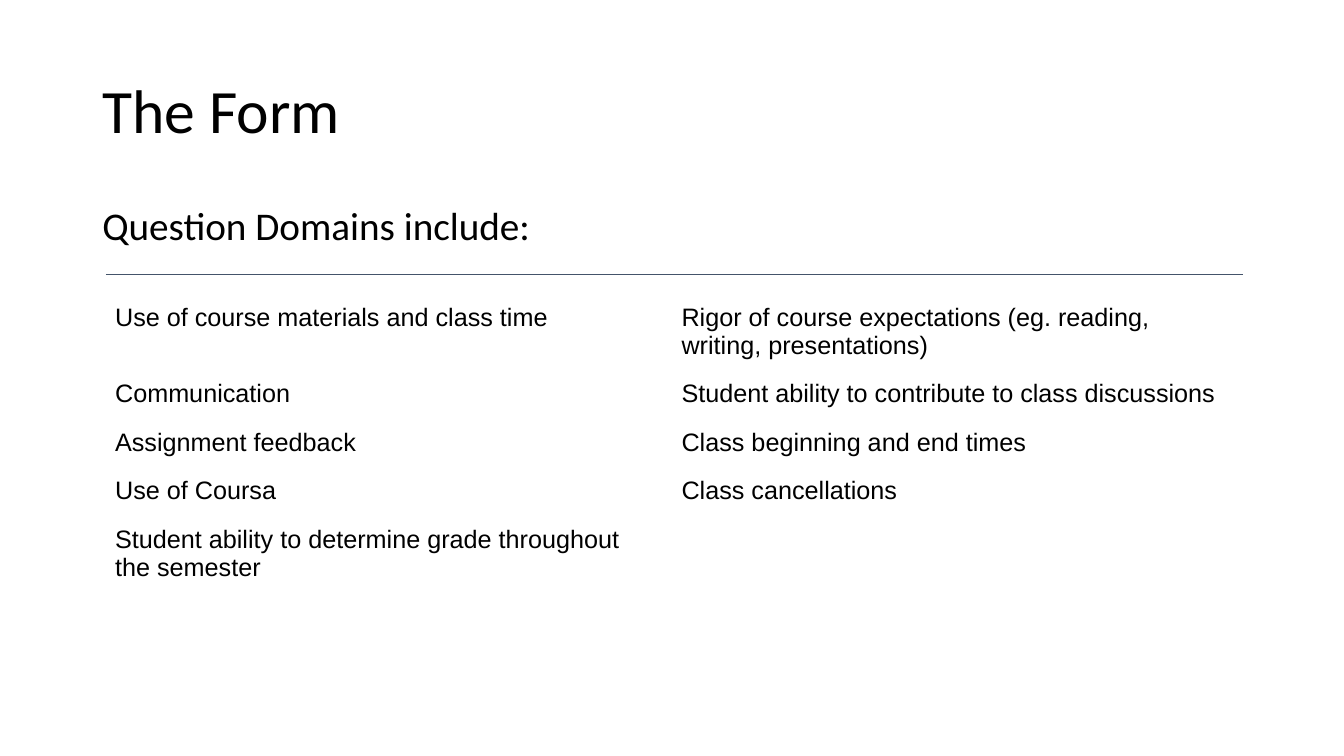
"""Build the slide that lists the question domains of the form."""
from pptx import Presentation
from pptx.dml.color import RGBColor
from pptx.enum.shapes import MSO_CONNECTOR as Connector
from pptx.enum.text import MSO_ANCHOR as Anchor, MSO_AUTO_SIZE as AutoSize, PP_ALIGN as Align
from pptx.oxml.ns import qn
from pptx.util import Pt
from lxml.etree import SubElement

BLACK = RGBColor(0x00, 0x00, 0x00)
SLATE = RGBColor(0x44, 0x54, 0x6A)

DOMAINS = [
    ("Use of course materials and class time",
     "Rigor of course expectations (eg. reading, writing, presentations)"),
    ("Communication", "Student ability to contribute to class discussions"),
    ("Assignment feedback", "Class beginning and end times"),
    ("Use of Coursa", "Class cancellations"),
    ("Student ability to determine grade throughout the semester", ""),
    ("", ""),
]
ROW_HEIGHTS = [30.24] * 5 + [24.48]
COLUMN_WIDTH = 404.64
CELL_MARGIN = 7.2


def write(para, text, font, size):
    span = para.add_run()
    span.text = text
    for name, value in {"name": font, "size": Pt(size), "bold": False}.items():
        setattr(span.font, name, value)
    span.font.color.rgb = BLACK


def set_heading(box, text, size, place, anchor):
    for name, value in zip(("left", "top", "width", "height"), place):
        setattr(box, name, Pt(value))
    frame = box.text_frame
    frame_format = {
        "word_wrap": True, "auto_size": AutoSize.NONE, "vertical_anchor": anchor,
        "margin_left": Pt(7.2), "margin_right": Pt(7.2),
        "margin_top": Pt(3.6), "margin_bottom": Pt(3.6),
    }
    for name, value in frame_format.items():
        setattr(frame, name, value)
    para = frame.paragraphs[0]
    para.alignment = Align.LEFT
    para.line_spacing = 0.9
    write(para, text, "Calibri", size)


deck = Presentation()
deck.slide_width, deck.slide_height = Pt(960), Pt(540)
page = deck.slides.add_slide(deck.slide_layouts[5])

set_heading(page.shapes.title, "The Form", 44, (66, 28.8, 828, 104.4), Anchor.MIDDLE)
intro = page.shapes.add_textbox(0, 0, 0, 0)
set_heading(intro, "Question Domains include:", 28, (66, 144, 828, 342.6), Anchor.TOP)

rule = page.shapes.add_connector(Connector.STRAIGHT, Pt(75.6), Pt(196), Pt(888), Pt(196))
rule.line.color.rgb = SLATE
rule.line.width = Pt(0.75)
SubElement(rule.element.spPr, qn("a:effectLst"))

grid = page.shapes.add_table(
    len(DOMAINS), 2, Pt(75), Pt(209.5), Pt(2 * COLUMN_WIDTH), Pt(sum(ROW_HEIGHTS))).table
grid.first_row = False
grid.horz_banding = False
for column in grid.columns:
    column.width = Pt(COLUMN_WIDTH)
for row, height, texts in zip(grid.rows, ROW_HEIGHTS, DOMAINS):
    row.height = Pt(height)
    for cell, text in zip(row.cells, texts):
        cell.fill.background()
        cell.vertical_anchor = Anchor.TOP
        for side in ("left", "right", "top", "bottom"):
            setattr(cell, f"margin_{side}", Pt(CELL_MARGIN))
        if text:
            write(cell.text_frame.paragraphs[0], text, "Arial", 18)

deck.save("out.pptx")
